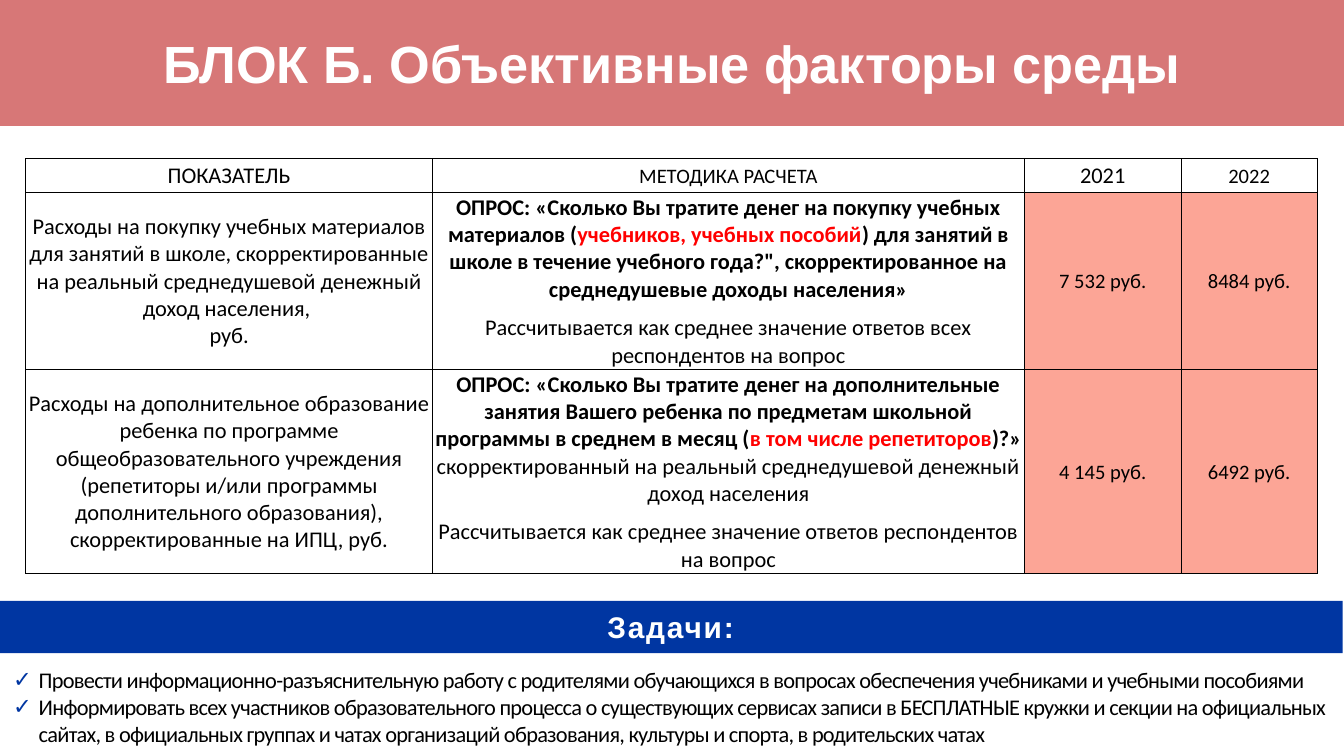
from lxml.etree import SubElement
from pptx import Presentation
from pptx.dml.color import RGBColor
from pptx.enum.shapes import MSO_SHAPE
from pptx.enum.text import MSO_ANCHOR, PP_ALIGN
from pptx.oxml import parse_xml
from pptx.oxml.ns import nsdecls, qn
from pptx.util import Inches, Pt

BLACK = RGBColor(0x00, 0x00, 0x00)
WHITE = RGBColor(0xFF, 0xFF, 0xFF)
RED = RGBColor(0xFF, 0x00, 0x00)
ROSE = RGBColor(0xD7, 0x77, 0x77)
SALMON = RGBColor(0xFC, 0xA5, 0x96)
BLUE = RGBColor(0x00, 0x36, 0xA2)

SLIDE_WIDTH = 10
SLIDE_HEIGHT = SLIDE_WIDTH * 9 / 16
COLUMN_WIDTHS = [3.03, 4.4, 1.17, 1.01]
ROW_HEIGHTS = [0.25, 1.32, 1.51]
HEADERS = [("ПОКАЗАТЕЛЬ", 12), ("МЕТОДИКА РАСЧЕТА", 11), ("2021", 12), ("2022", 11)]

INDICATORS = [
    (
        ["Расходы на покупку учебных материалов для занятий в школе, скорректированные "
         "на реальный среднедушевой денежный доход населения, ", "руб."],
        [
            ([("ОПРОС: «Сколько Вы тратите денег на покупку учебных материалов (", True, BLACK),
              ("учебников, учебных пособий", True, RED),
              (") для занятий в школе в течение учебного года?\", скорректированное "
               "на среднедушевые доходы населения»", True, BLACK)], 0, 0),
            ([("Рассчитывается как среднее значение ответов всех респондентов на вопрос",
               False, BLACK)], 6, 6),
        ],
        ["7 532 руб.", "8484 руб."],
    ),
    (
        ["Расходы на дополнительное образование ребенка по программе общеобразовательного "
         "учреждения (репетиторы и/или программы дополнительного образования), "
         "скорректированные на ИПЦ, руб."],
        [
            ([("ОПРОС: «Сколько Вы тратите денег на дополнительные занятия Вашего ребенка "
               "по предметам школьной программы в среднем в месяц (", True, BLACK),
              ("в том числе репетиторов", True, RED),
              (")?» ", True, BLACK),
              ("скорректированный на реальный среднедушевой денежный доход населения",
               False, BLACK)], 0, 6),
            ([("Рассчитывается как среднее значение ответов респондентов на вопрос",
               False, BLACK)], 0, 0),
        ],
        ["4 145 руб.", "6492 руб."],
    ),
]

TASKS = [
    "Провести информационно-разъяснительную работу с родителями обучающихся в вопросах "
    "обеспечения учебниками и учебными пособиями",
    "Информировать всех участников образовательного процесса о существующих сервисах записи "
    "в БЕСПЛАТНЫЕ кружки и секции на официальных сайтах, в официальных группах и чатах "
    "организаций образования, культуры и спорта, в родительских чатах",
]


def add_span(para, text, size, font="Calibri", color=BLACK, bold=False, spacing=None):
    span = para.add_run()
    span.text = text
    span.font.size = Pt(size)
    span.font.name = font
    span.font.bold = bold
    span.font.color.rgb = color
    if spacing is not None:
        span.font._element.set("spc", str(round(spacing * 100)))


def next_para(frame, index):
    return frame.add_paragraph() if index else frame.paragraphs[0]


def fill_title(title):
    title.left, title.top = 0, 0
    title.width, title.height = Inches(SLIDE_WIDTH), Inches(SLIDE_HEIGHT / 6)
    title.fill.solid()
    title.fill.fore_color.rgb = ROSE
    title.text_frame.vertical_anchor = MSO_ANCHOR.MIDDLE
    para = title.text_frame.paragraphs[0]
    para.alignment = PP_ALIGN.CENTER
    add_span(para, "БЛОК Б. Объективные факторы среды", 28, "Arial", WHITE, True)


def add_borders(cell):
    properties = cell._tc.get_or_add_tcPr()
    for index, side in enumerate(("lnL", "lnR", "lnT", "lnB")):
        properties.insert(index, parse_xml(
            f'<a:{side} {nsdecls("a")} w="{Pt(0.5)}"><a:solidFill>'
            f'<a:srgbClr val="{BLACK}"/></a:solidFill></a:{side}>'))


def fill_cell(cell, paragraphs, size, fill=None):
    cell.margin_left = cell.margin_right = cell.margin_top = Inches(0.01)
    cell.margin_bottom = 0
    cell.vertical_anchor = MSO_ANCHOR.MIDDLE
    if fill is None:
        cell.fill.background()
    else:
        cell.fill.solid()
        cell.fill.fore_color.rgb = fill
    add_borders(cell)
    for index, (spans, before, after) in enumerate(paragraphs):
        para = next_para(cell.text_frame, index)
        para.alignment = PP_ALIGN.CENTER
        para.space_before, para.space_after = Pt(before), Pt(after)
        for text, bold, color in spans:
            add_span(para, text, size, color=color, bold=bold)


def plain(*texts):
    return [([(text, False, BLACK)], 0, 0) for text in texts]


def add_indicator_table(page):
    table = page.shapes.add_table(
        len(ROW_HEIGHTS), len(COLUMN_WIDTHS), Inches(0.19), Inches(1.18),
        Inches(sum(COLUMN_WIDTHS)), Inches(sum(ROW_HEIGHTS))).table
    table.first_row = table.horz_banding = False
    for column, width in zip(table.columns, COLUMN_WIDTHS):
        column.width = Inches(width)
    for row, height in zip(table.rows, ROW_HEIGHTS):
        row.height = Inches(height)
    for column, (text, size) in enumerate(HEADERS):
        last = column == len(HEADERS) - 1
        fill_cell(table.cell(0, column), plain(text), size, WHITE if last else None)
    for row, (names, method, values) in enumerate(INDICATORS, 1):
        fill_cell(table.cell(row, 0), plain(*names), 12)
        fill_cell(table.cell(row, 1), method, 12)
        for column, value in enumerate(values, 2):
            fill_cell(table.cell(row, column), plain(value), 11, SALMON)


def add_band(page, text):
    band = page.shapes.add_shape(
        MSO_SHAPE.RECTANGLE, Inches(-0.01), Inches(4.47), Inches(SLIDE_WIDTH), Inches(0.39))
    band.shadow.inherit = False
    band.fill.solid()
    band.fill.fore_color.rgb = BLUE
    band.line.fill.background()
    band.text_frame.vertical_anchor = MSO_ANCHOR.MIDDLE
    para = band.text_frame.paragraphs[0]
    para.alignment = PP_ALIGN.CENTER
    add_span(para, text, 16, "Arial", WHITE, True, 1)


def add_check_mark(para):
    properties = para._p.get_or_add_pPr()
    properties.set("marL", str(Inches(0.19)))
    properties.set("indent", str(-Inches(0.19)))
    color = SubElement(properties, qn("a:buClr"))
    SubElement(color, qn("a:srgbClr"), val=str(BLUE))
    SubElement(properties, qn("a:buFont"), typeface="Calibri")
    SubElement(properties, qn("a:buChar"), char="✓")


def add_task_list(page, tasks):
    box = page.shapes.add_textbox(Inches(0), Inches(4.91), Inches(10.03), Inches(0.71))
    box.text_frame.word_wrap = True
    for index, task in enumerate(tasks):
        para = next_para(box.text_frame, index)
        add_check_mark(para)
        add_span(para, task, 12, spacing=-0.4)


def main():
    deck = Presentation()
    deck.slide_width, deck.slide_height = Inches(SLIDE_WIDTH), Inches(SLIDE_HEIGHT)
    page = deck.slides.add_slide(deck.slide_layouts[5])
    fill_title(page.shapes.title)
    add_indicator_table(page)
    add_band(page, "Задачи:")
    add_task_list(page, TASKS)
    deck.save("out.pptx")


if __name__ == "__main__":
    main()
